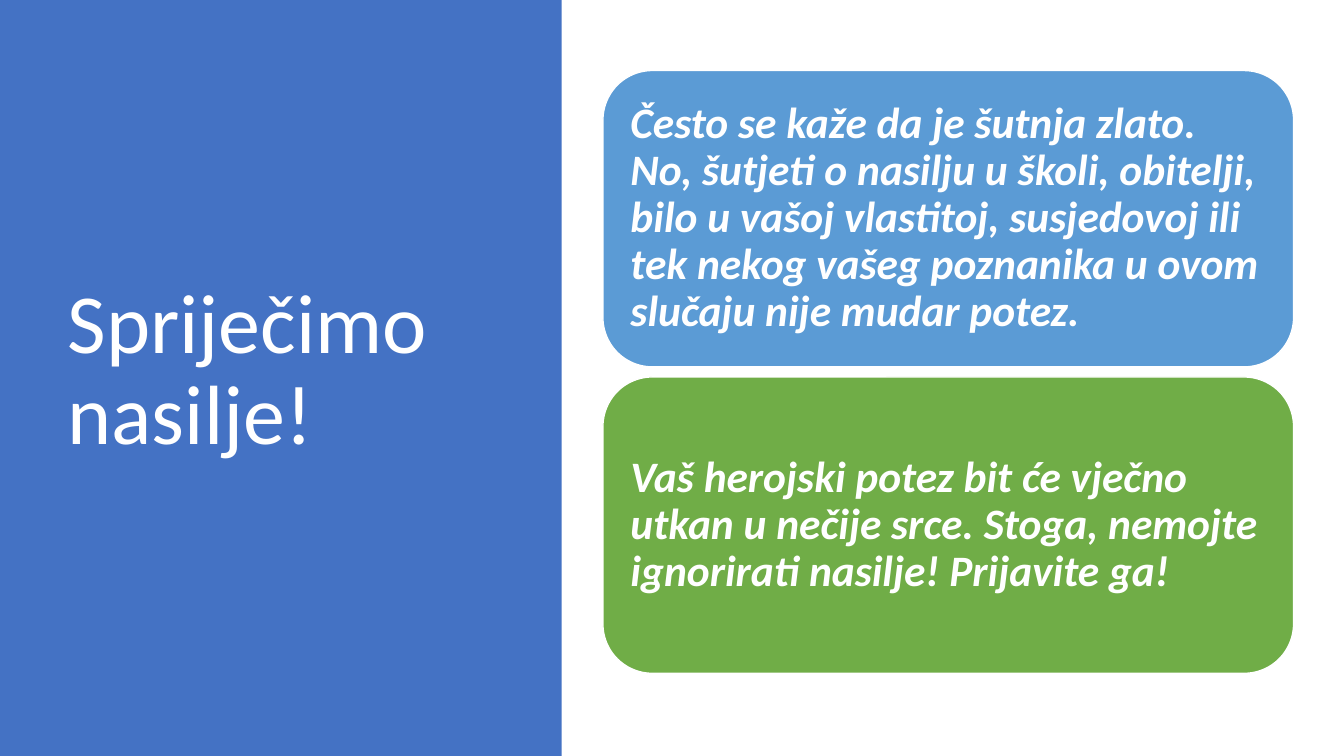
"""Build a slide with a title panel and two stacked message cards."""
import pptx
import pptx.dml.color
import pptx.enum.shapes
import pptx.enum.text
import pptx.util

RGB = pptx.dml.color.RGBColor
KIND = pptx.enum.shapes.MSO_SHAPE
WHITE = RGB(0xFF, 0xFF, 0xFF)
NAVY = RGB(0x44, 0x72, 0xC4)
BLUE = RGB(0x5B, 0x9B, 0xD5)
GREEN = RGB(0x70, 0xAD, 0x47)
SCALE = 9144

CARDS = [
    (BLUE, "Često se kaže da je šutnja zlato. No, šutjeti o nasilju u školi, "
           "obitelji, bilo u vašoj vlastitoj, susjedovoj ili tek nekog vašeg "
           "poznanika u ovom slučaju nije mudar potez."),
    (GREEN, "Vaš herojski potez bit će vječno utkan u nečije srce. "
            "Stoga, nemojte ignorirati nasilje! Prijavite ga!"),
]


def px(num):
    return pptx.util.Emu(num * SCALE)


def write(frame, text, size, font="Calibri", color=WHITE, bold=False, italic=False):
    frame.word_wrap = True
    frame.auto_size = pptx.enum.text.MSO_AUTO_SIZE.NONE
    frame.vertical_anchor = pptx.enum.text.MSO_ANCHOR.MIDDLE
    para = frame.paragraphs[0]
    para.alignment = pptx.enum.text.PP_ALIGN.LEFT
    para.line_spacing = 0.9
    run = para.add_run()
    run.text = text
    run.font.name = font
    run.font.size = pptx.util.Pt(size)
    run.font.color.rgb = color
    run.font.bold = bold
    run.font.italic = italic


class Deck:
    def __init__(self, wide, high):
        self.file = pptx.Presentation()
        self.file.slide_width = px(wide)
        self.file.slide_height = px(high)
        self.slide = self.file.slides.add_slide(self.file.slide_layouts[5])

    def shape(self, kind, box, fill):
        item = self.slide.shapes.add_shape(kind, *map(px, box))
        item.shadow.inherit = False
        item.fill.solid()
        item.fill.fore_color.rgb = fill
        item.line.fill.background()
        return item

    def panel(self, box, fill):
        item = self.shape(KIND.RECTANGLE, box, fill)
        self.slide.shapes.title.element.addprevious(item.element)

    def title(self, box, text):
        item = self.slide.shapes.title
        item.left, item.top, item.width, item.height = map(px, box)
        write(item.text_frame, text, 60)

    def card(self, box, fill, text):
        item = self.shape(KIND.ROUNDED_RECTANGLE, box, fill)
        item.line.color.rgb = WHITE
        item.line.width = pptx.util.Pt(1)
        frame = item.text_frame
        frame.margin_left = frame.margin_right = px(13)
        frame.margin_top = frame.margin_bottom = px(13)
        write(frame, text, 31, bold=True, italic=True)


def main():
    deck = Deck(1333, 750)
    deck.panel((0, 0, 557, 750), NAVY)
    deck.title((57, 68, 416, 602), "Spriječimo nasilje!")
    for row, (fill, text) in enumerate(CARDS):
        deck.card((598, 70 + row * 304, 685, 294), fill, text)
    deck.file.save("out.pptx")


if __name__ == "__main__":
    main()
